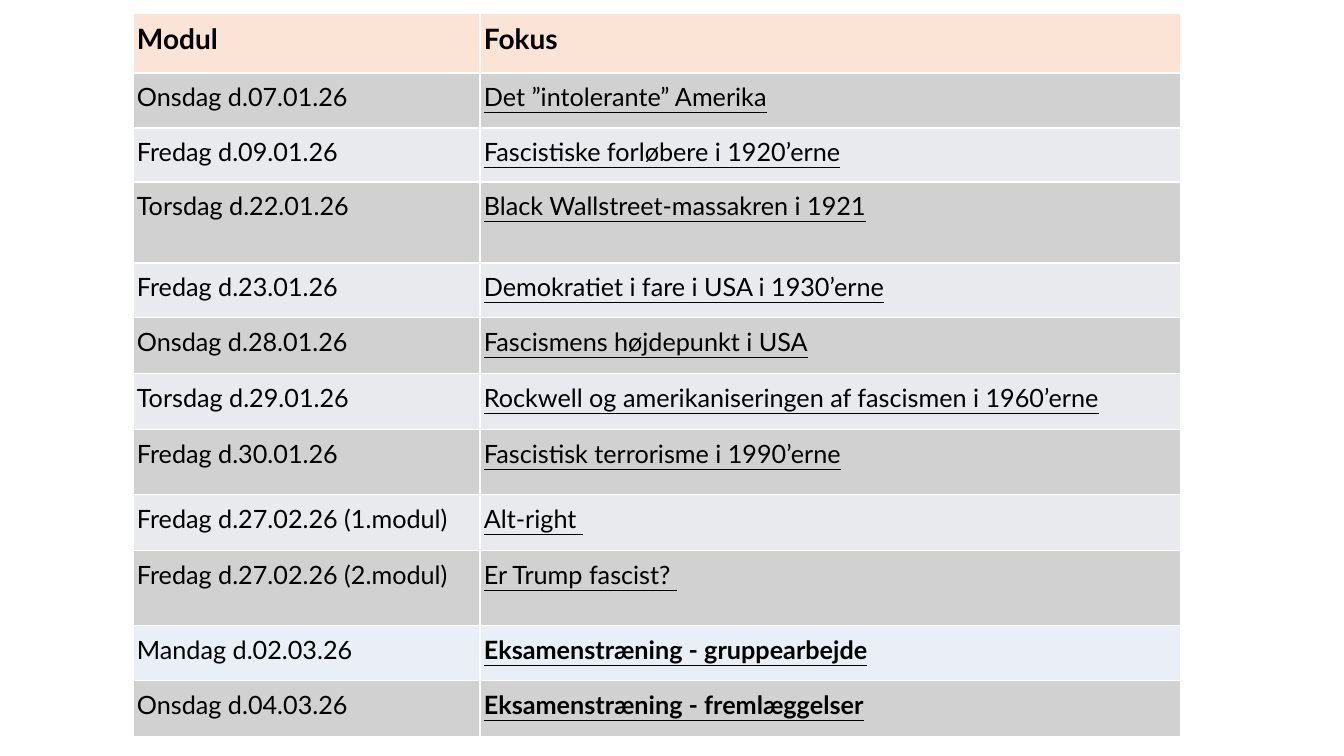
from lxml import etree
from pptx import Presentation
from pptx.dml.color import RGBColor
from pptx.oxml.ns import qn
from pptx.util import Emu, Pt

PX = 914400 / 100.8  # EMU per px
FONT = "Lato"
PEACH, GREY, PALE, BLUE = "FBE3D6", "D1D1D1", "E8EAED", "EAEFF7"


def px(length):
    return Emu(round(length * PX))


def color(code):
    return RGBColor.from_string(code)


# Module plan: date, focus, row height, fill
plan = [
    ("Modul", "Fokus", 60, PEACH),
    ("Onsdag d.07.01.26", "Det ”intolerante” Amerika", 55, GREY),
    ("Fredag d.09.01.26", "Fascistiske forløbere i 1920’erne", 54, PALE),
    ("Torsdag d.22.01.26", "Black Wallstreet-massakren i 1921", 81, GREY),
    ("Fredag d.23.01.26", "Demokratiet i fare i USA i 1930’erne", 55, PALE),
    ("Onsdag d.28.01.26", "Fascismens højdepunkt i USA", 56, GREY),
    ("Torsdag d.29.01.26", "Rockwell og amerikaniseringen af fascismen i 1960’erne", 56, PALE),
    ("Fredag d.30.01.26", "Fascistisk terrorisme i 1990’erne", 65, GREY),
    ("Fredag d.27.02.26 (1.modul)", "Alt-right ", 56, PALE),
    ("Fredag d.27.02.26 (2.modul)", "Er Trump fascist? ", 75, GREY),
    ("Mandag d.02.03.26", "Eksamenstræning - gruppearbejde", 55, BLUE),
    ("Onsdag d.04.03.26", "Eksamenstræning - fremlæggelser", 56, GREY),
]
widths = (347, 701)

# Page
deck = Presentation()
deck.slide_width, deck.slide_height = px(1344), px(756)
page = deck.slides.add_slide(deck.slide_layouts[6])

# Table grid
table = page.shapes.add_table(
    len(plan), len(widths), px(133), px(13),
    px(sum(widths)), px(sum(height for _, _, height, _ in plan))).table
for column, width in zip(table.columns, widths):
    column.width = px(width)

# Cells
for index, (date, focus, height, fill) in enumerate(plan):
    table.rows[index].height = px(height)
    is_header = index == 0
    for side, text in enumerate((date, focus)):
        cell = table.cell(index, side)
        cell.margin_left = cell.margin_right = px(4)
        cell.margin_top = cell.margin_bottom = px(4)
        cell.fill.solid()
        cell.fill.fore_color.rgb = color(fill)

        para = cell.text_frame.paragraphs[0]
        para.text = text
        para.line_spacing = 1.15
        para.font.name = FONT
        para.font.size = Pt(20 if is_header else 18)
        para.font.bold = is_header or focus.startswith("Eksamen") and side == 1
        para.font.underline = side == 1 and not is_header
        para.font.color.rgb = color("000000")

        # White borders, placed ahead of the fill
        properties = cell._tc.get_or_add_tcPr()
        for place, edge in enumerate(("a:lnL", "a:lnR", "a:lnT", "a:lnB")):
            line = etree.Element(qn(edge), w=str(Pt(1)))
            paint = etree.SubElement(line, qn("a:solidFill"))
            etree.SubElement(paint, qn("a:srgbClr"), val="FFFFFF")
            properties.insert(place, line)

deck.save("out.pptx")
